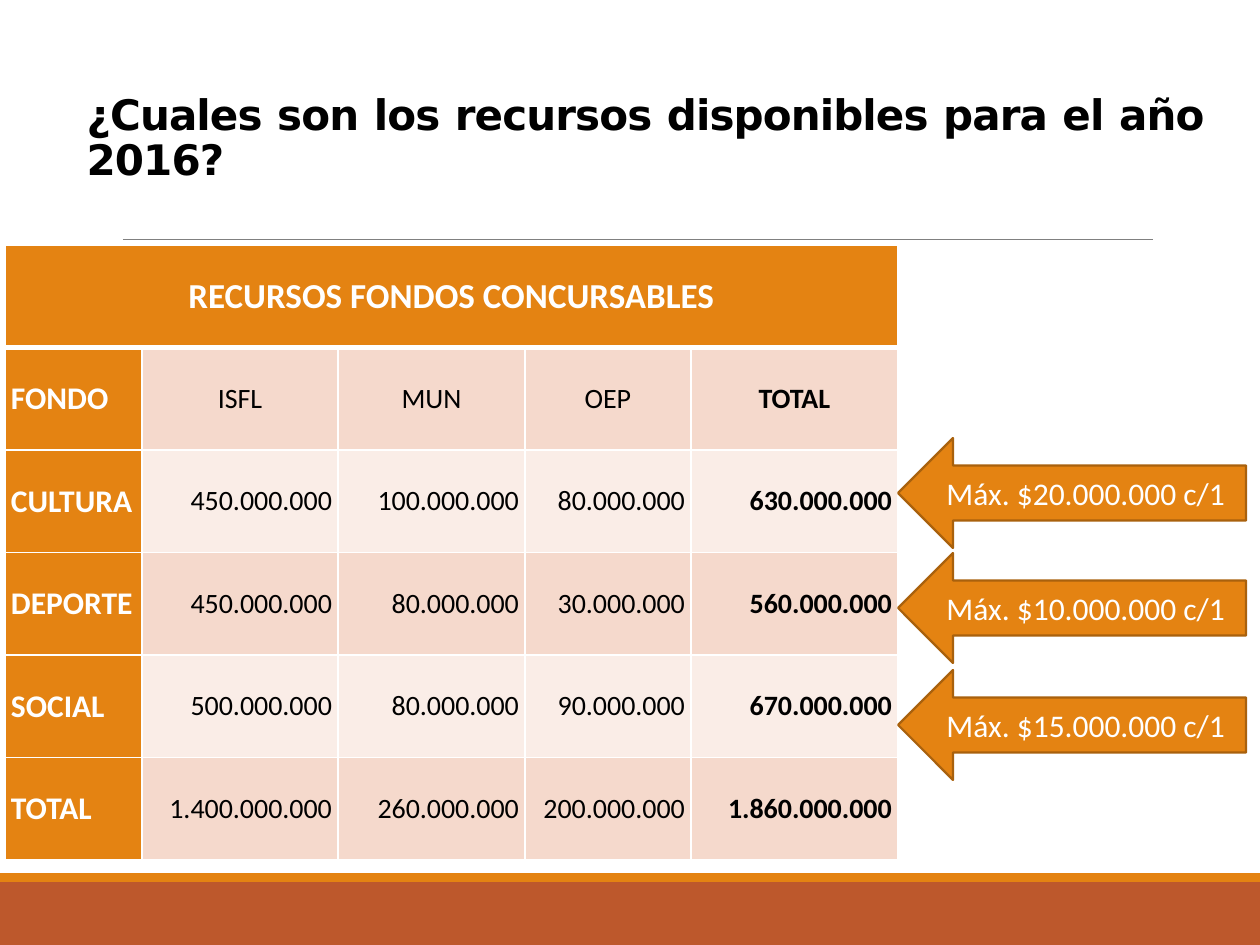
import pptx
import pptx.util
import pptx.dml.color
import pptx.enum.shapes
import pptx.enum.text
import pptx.oxml
import pptx.oxml.ns
from dataclasses import dataclass

TITLE = "¿Cuales son los recursos disponibles para el año 2016?"
HEAD = "RECURSOS FONDOS CONCURSABLES"
ROWS = [
    ["FONDO", "ISFL", "MUN", "OEP", "TOTAL"],
    ["CULTURA", "450.000.000", "100.000.000", "80.000.000", "630.000.000"],
    ["DEPORTE", "450.000.000", "80.000.000", "30.000.000", "560.000.000"],
    ["SOCIAL", "500.000.000", "80.000.000", "90.000.000", "670.000.000"],
    ["TOTAL", "1.400.000.000", "260.000.000", "200.000.000", "1.860.000.000"],
]
COLS = [137, 196, 187, 166, 207]
LIMITS = [
    ("Máx. $20.000.000 c/1", 438),
    ("Máx. $10.000.000 c/1", 553),
    ("Máx. $15.000.000 c/1", 670),
]


@dataclass(frozen=True)
class Theme:
    main: str = "E48312"
    edge: str = "A9610D"
    foot: str = "BD582C"
    rule: str = "808080"
    dark: str = "F5D9CC"
    light: str = "FAEDE7"
    white: str = "FFFFFF"
    black: str = "000000"
    body: str = "Calibri"
    title: str = "DejaVu Sans"
    big: int = 24
    head: int = 20
    label: int = 18
    cell: int = 16


T = Theme()
ALIGN = pptx.enum.text.PP_ALIGN
MID = pptx.enum.text.MSO_ANCHOR.MIDDLE
KIND = pptx.enum.shapes.MSO_SHAPE
Pt = pptx.util.Pt


def px(n):
    return pptx.util.Emu(round(n * 914400 / 126))


def rgb(code):
    return pptx.dml.color.RGBColor.from_string(code)


def write(frame, text, size, color, align, bold=False, face=T.body):
    para = frame.paragraphs[0]
    para.alignment = align
    run = para.add_run()
    run.text = text
    font = run.font
    font.name, font.size, font.bold = face, Pt(size), bold
    font.color.rgb = rgb(color)
    return para, run


def block(slide, kind, box, fill, edge=None):
    shape = slide.shapes.add_shape(kind, *map(px, box))
    shape.shadow.inherit = False
    shape.fill.solid()
    shape.fill.fore_color.rgb = rgb(fill)
    if edge:
        shape.line.color.rgb = rgb(edge)
        shape.line.width = Pt(1.25)
    else:
        shape.line.fill.background()
    return shape


def border(cell, top, bottom):
    """Give the cell white sides; top and bottom are widths in points."""
    props = cell._tc.get_or_add_tcPr()
    for i, (side, width) in enumerate(zip("LRTB", (1, 1, top, bottom))):
        props.insert(i, pptx.oxml.parse_xml(
            f'<a:ln{side} {pptx.oxml.ns.nsdecls("a")} w="{Pt(width)}">'
            f'<a:solidFill><a:srgbClr val="{T.white}"/></a:solidFill>'
            f'</a:ln{side}>'))


def style(cell, fill, row):
    cell.fill.solid()
    cell.fill.fore_color.rgb = rgb(fill)
    cell.vertical_anchor = MID
    cell.margin_left = cell.margin_right = px(6)
    cell.margin_top = cell.margin_bottom = 0
    border(cell, 3 if row == 1 else 1, 3 if row == 0 else 1)


def add_base(slide):
    block(slide, KIND.RECTANGLE, (0, 882, 1260, 63), T.foot)
    block(slide, KIND.RECTANGLE, (0, 873, 1260, 9), T.main)
    line = slide.shapes.add_connector(
        pptx.enum.shapes.MSO_CONNECTOR.STRAIGHT,
        px(123), px(239), px(1153), px(239))
    line.line.color.rgb = rgb(T.rule)
    line.line.width = Pt(0.5)
    line._element.spPr.append(pptx.oxml.parse_xml(
        f'<a:effectLst {pptx.oxml.ns.nsdecls("a")}/>'))


def add_title(slide):
    title = slide.shapes.title
    title.left, title.top, title.width, title.height = map(px, (74, 88, 1142, 106))
    frame = title.text_frame
    frame.word_wrap = True
    frame.auto_size = pptx.enum.text.MSO_AUTO_SIZE.NONE
    frame.vertical_anchor = pptx.enum.text.MSO_ANCHOR.TOP
    para, run = write(frame, TITLE, T.big, T.black, ALIGN.JUSTIFY, True, T.title)
    para.line_spacing = 0.9
    para.space_before, para.space_after = Pt(12), Pt(2)
    run._r.get_or_add_rPr().set("spc", "-50")


def add_funds(slide):
    count = len(ROWS) + 1
    table = slide.shapes.add_table(
        count, len(COLS), px(5), px(245), px(sum(COLS)), px(615)).table
    for col, width in zip(table.columns, COLS):
        col.width = px(width)
    for row in table.rows:
        row.height = px(615 / count)
    for c in range(len(COLS)):
        style(table.cell(0, c), T.main, 0)
    table.cell(0, 0).merge(table.cell(0, len(COLS) - 1))
    write(table.cell(0, 0).text_frame, HEAD, T.head, T.white, ALIGN.CENTER, True)

    for r, row in enumerate(ROWS, 1):
        band = T.dark if r % 2 else T.light
        for c, text in enumerate(row):
            cell = table.cell(r, c)
            style(cell, band if c else T.main, r)
            if c == 0:
                write(cell.text_frame, text, T.label, T.white, ALIGN.LEFT, True)
            else:
                align = ALIGN.CENTER if r == 1 else ALIGN.RIGHT
                last = c == len(COLS) - 1
                write(cell.text_frame, text, T.cell, T.black, align, last)


def add_limits(slide):
    for text, top in LIMITS:
        arrow = block(slide, KIND.LEFT_ARROW, (898, top, 348, 110), T.main, T.edge)
        arrow.text_frame.word_wrap = True
        arrow.text_frame.vertical_anchor = MID
        write(arrow.text_frame, text, T.label, T.white, ALIGN.CENTER)


def main():
    deck = pptx.Presentation()
    deck.slide_width, deck.slide_height = px(1260), px(945)
    slide = deck.slides.add_slide(deck.slide_layouts[5])
    add_base(slide)
    add_title(slide)
    add_funds(slide)
    add_limits(slide)
    deck.save("out.pptx")


if __name__ == "__main__":
    main()
